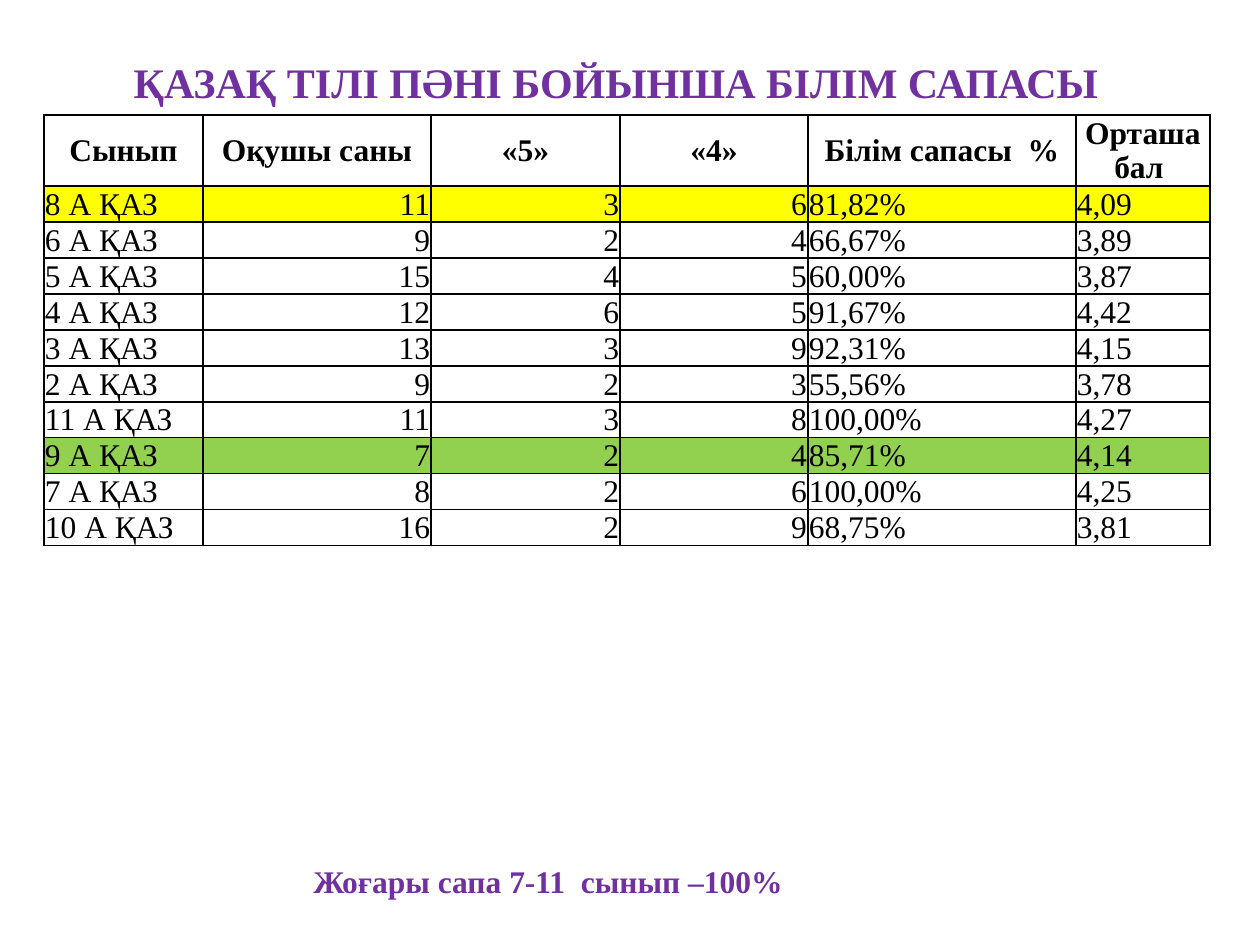
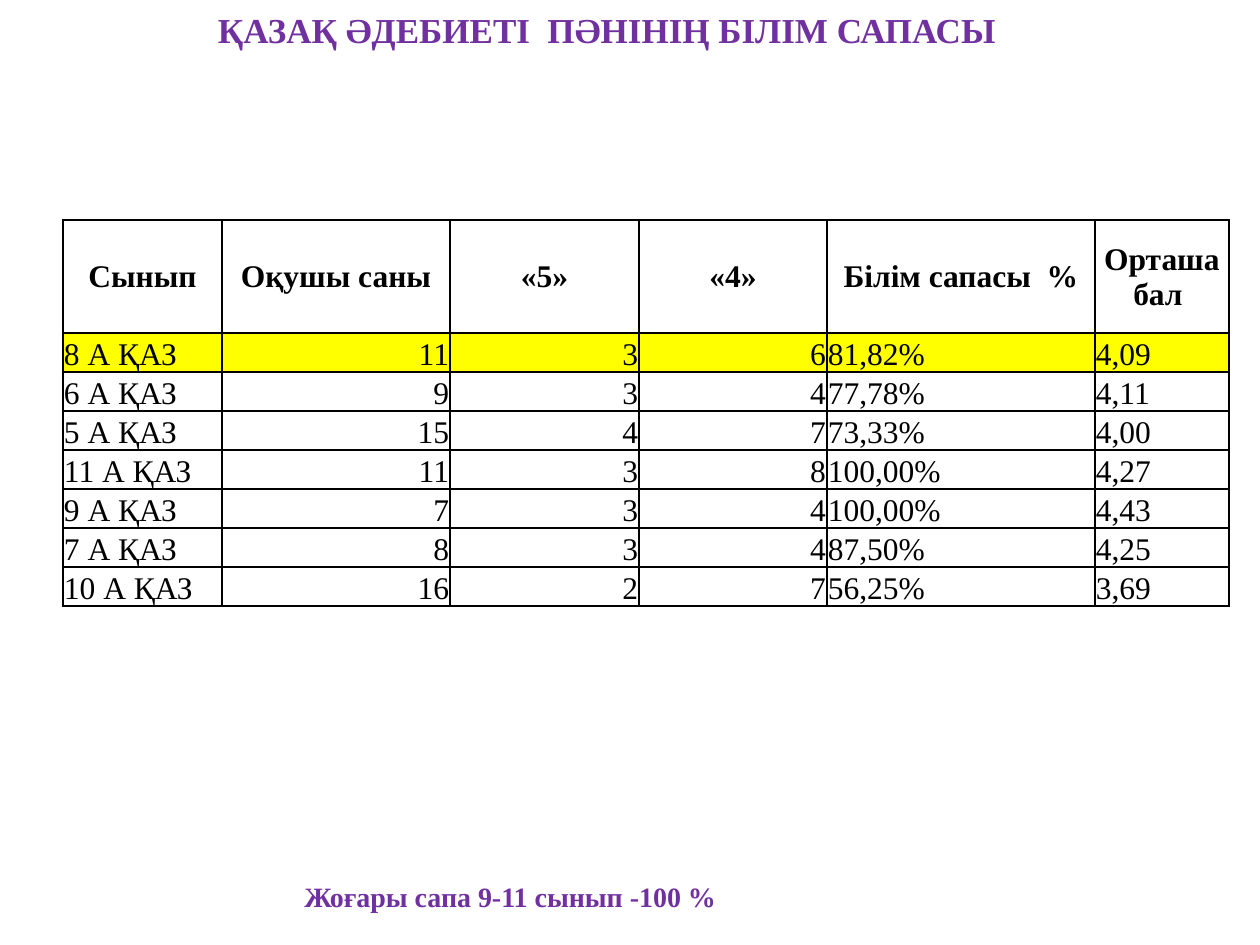
from lxml.etree import SubElement as Sub
from pptx import Presentation
from pptx.dml.color import RGBColor as RGB
from pptx.enum.text import MSO_ANCHOR as Anchor, PP_ALIGN as Align
from pptx.oxml.ns import qn
from pptx.util import Pt

PX = 914400 / 126
FONT = "Times New Roman"
HUES = {"text": "000000", "title": "7030A0", "plain": "FFFFFF",
        "gold": "FFFF00", "green": "92D050"}
COLS = [159, 228, 189, 188, 268, 134]
HEAD = ["Сынып", "Оқушы саны", "«5»", "«4»", "Білім сапасы  %", "Орташа бал "]
SIDES = [Align.LEFT] + [Align.RIGHT] * 3 + [Align.LEFT] * 2

LANG = [
    ["8 А ҚАЗ", 11, 3, 6, "81,82%", "4,09"],
    ["6 А ҚАЗ", 9, 2, 4, "66,67%", "3,89"],
    ["5 А ҚАЗ", 15, 4, 5, "60,00%", "3,87"],
    ["4 А ҚАЗ", 12, 6, 5, "91,67%", "4,42"],
    ["3 А ҚАЗ", 13, 3, 9, "92,31%", "4,15"],
    ["2 А ҚАЗ", 9, 2, 3, "55,56%", "3,78"],
    ["11 А ҚАЗ", 11, 3, 8, "100,00%", "4,27"],
    ["9 А ҚАЗ", 7, 2, 4, "85,71%", "4,14"],
    ["7 А ҚАЗ", 8, 2, 6, "100,00%", "4,25"],
    ["10 А ҚАЗ", 16, 2, 9, "68,75%", "3,81"],
]
LIT = [
    ["8 А ҚАЗ", 11, 3, 6, "81,82%", "4,09"],
    ["6 А ҚАЗ", 9, 3, 4, "77,78%", "4,11"],
    ["5 А ҚАЗ", 15, 4, 7, "73,33%", "4,00"],
    ["11 А ҚАЗ", 11, 3, 8, "100,00%", "4,27"],
    ["9 А ҚАЗ", 7, 3, 4, "100,00%", "4,43"],
    ["7 А ҚАЗ", 8, 3, 4, "87,50%", "4,25"],
    ["10 А ҚАЗ", 16, 2, 7, "56,25%", "3,69"],
]


def emu(px):
    return round(px * PX)


class Deck:
    def __init__(self, wide, high):
        self.prs = Presentation()
        self.prs.slide_width, self.prs.slide_height = emu(wide), emu(high)
        self.slide = None

    def page(self):
        self.slide = self.prs.slides.add_slide(self.prs.slide_layouts[6])

    def style(self, frame, size, hue, bold, side, pitch=None):
        para = frame.paragraphs[0]
        para.alignment = side
        para.line_spacing = pitch
        for run in para.runs:
            font = run.font
            font.name, font.size, font.bold = FONT, Pt(size), bold
            font.color.rgb = RGB.from_string(HUES[hue])

    def label(self, text, box, size, side=Align.LEFT, anchor=Anchor.TOP):
        frame = self.slide.shapes.add_textbox(*map(emu, box)).text_frame
        frame.word_wrap = True
        frame.vertical_anchor = anchor
        frame.text = text
        self.style(frame, size, "title", True, side)

    def title(self, text, left, top, size):
        self.label(text, (left, top, 1134, 86), size, Align.CENTER, Anchor.MIDDLE)

    def edge(self, cell):
        """Draw a thin line on all four sides of a cell."""
        props = cell._tc.get_or_add_tcPr()
        for tag in ("a:lnL", "a:lnR", "a:lnT", "a:lnB"):
            line = Sub(props, qn(tag), w=str(Pt(1)))
            fill = Sub(line, qn("a:solidFill"))
            Sub(fill, qn("a:srgbClr"), val=HUES["text"])

    def cell(self, cell, text, hue, head, side, pitch):
        self.edge(cell)
        cell.fill.solid()
        cell.fill.fore_color.rgb = RGB.from_string(HUES[hue])
        cell.margin_left = cell.margin_right = cell.margin_top = emu(1)
        cell.margin_bottom = 0
        cell.vertical_anchor = Anchor.MIDDLE if head else Anchor.BOTTOM
        cell.text_frame.text = str(text)
        self.style(cell.text_frame, 18, "text", head, side, pitch)

    def table(self, left, top, rows, tall, step, marks, pitch=None):
        """Put rows below a header; marks maps a row number to its fill."""
        high = tall + step * len(rows)
        size = map(emu, (left, top, sum(COLS), high))
        grid = self.slide.shapes.add_table(len(rows) + 1, len(COLS), *size).table
        grid.horz_banding = False
        for col, wide in zip(grid.columns, COLS):
            col.width = emu(wide)
        for r, row in enumerate([HEAD] + rows):
            head = r == 0
            hue = marks.get(r, "plain")
            grid.rows[r].height = emu(tall if head else step)
            for c, text in enumerate(row):
                side = Align.CENTER if head else SIDES[c]
                self.cell(grid.cell(r, c), text, hue, head, side, pitch)


def main():
    deck = Deck(1260, 945)

    deck.page()
    deck.title("ҚАЗАҚ ТІЛІ ПӘНІ БОЙЫНША БІЛІМ САПАСЫ", 49, 39, 24)
    deck.table(44, 115, LANG, 71, 36, {1: "gold", 8: "green"}, Pt(19.8))
    deck.label("Жоғары сапа 7-11  сынып –100%", (301, 856, 630, 50), 18)

    deck.page()
    deck.title("ҚАЗАҚ ӘДЕБИЕТІ  ПӘНІНІҢ БІЛІМ САПАСЫ", 40, -14, 20)
    deck.label("Жоғары сапа 9-11 сынып -100 %", (292, 873, 630, 47), 16)
    deck.table(63, 220, LIT, 113, 39, {1: "gold"})

    deck.prs.save("out.pptx")


if __name__ == "__main__":
    main()
